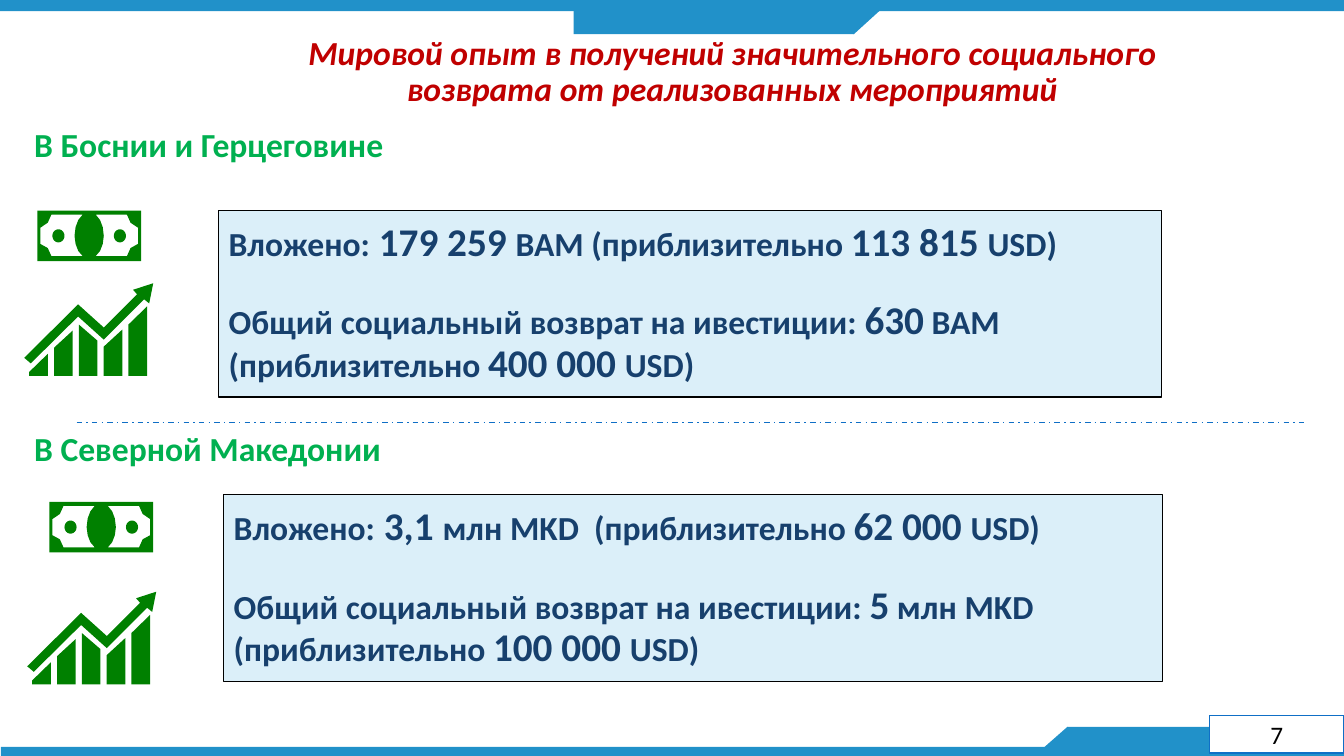
from dataclasses import dataclass
from math import cos, pi, sin

from lxml.etree import SubElement
from pptx import Presentation
from pptx.dml.color import RGBColor
from pptx.enum.dml import MSO_LINE
from pptx.enum.shapes import MSO_CONNECTOR, MSO_SHAPE as Shape
from pptx.enum.text import MSO_ANCHOR, MSO_AUTO_SIZE, PP_ALIGN
from pptx.oxml.ns import qn
from pptx.util import Emu, Inches, Pt


@dataclass(frozen=True)
class Theme:
    font: str = "Calibri"
    band: RGBColor = RGBColor(0x21, 0x91, 0xC9)
    panel: RGBColor = RGBColor(0xDB, 0xEF, 0xF9)
    rule: RGBColor = RGBColor(0x0F, 0x6F, 0xC6)
    navy: RGBColor = RGBColor(0x17, 0x40, 0x6D)
    red: RGBColor = RGBColor(0xC0, 0x00, 0x00)
    green: RGBColor = RGBColor(0x00, 0xB0, 0x50)
    icon: RGBColor = RGBColor(0x00, 0x80, 0x00)
    black: RGBColor = RGBColor(0x00, 0x00, 0x00)
    white: RGBColor = RGBColor(0xFF, 0xFF, 0xFF)
    number_size: Pt = Pt(18)
    text_size: Pt = Pt(24)
    figure_size: Pt = Pt(28)


theme = Theme()


def cells(*counts):
    """Turn counts of grid cells, a tenth of an inch each, into lengths."""
    return [Emu(round(count * Inches(0.1))) for count in counts]


def style(paragraph, color, size=theme.text_size, bold=True):
    paragraph.font.name = theme.font
    paragraph.font.size = size
    paragraph.font.bold = bold
    paragraph.font.color.rgb = color


COLUMNS, ROWS = 133.33, 75
presentation = Presentation()
presentation.slide_width, presentation.slide_height = cells(COLUMNS, ROWS)
slide = presentation.slides.add_slide(presentation.slide_layouts[5])
shapes = slide.shapes

# Bands along the top and bottom edges
for kind, left, top, width, height, rotation in (
    (Shape.RECTANGLE, 0, 0, COLUMNS, 1.1, 0),
    (Shape.RECTANGLE, 0.1, 74.1, COLUMNS - 0.1, 0.9, 0),
    (Shape.RECTANGLE, 56.9, 0.4, 27.8, 3, 0),
    (Shape.FLOWCHART_MERGE, 81.4, 0.4, 6.6, 3, 0),
    (Shape.RECTANGLE, 105.9, 72.1, COLUMNS - 105.9, 2.9, 0),
    (Shape.FLOWCHART_MERGE, 102.6, 72.1, 6.6, 2.9, 180),
):
    band = shapes.add_shape(kind, *cells(left, top, width, height))
    band.rotation = rotation
    band.shadow.inherit = False
    band.fill.solid()
    band.fill.fore_color.rgb = theme.band
    band.line.fill.background()

# Heading
title = shapes.title
title.left, title.top, title.width, title.height = cells(28.1, 2.9, 89.1, 8.6)
title.text_frame.text = (
    "Мировой опыт в получений значительного социального возврата от реализованных мероприятий"
)
title.text_frame.auto_size = MSO_AUTO_SIZE.NONE
title.text_frame.vertical_anchor = MSO_ANCHOR.MIDDLE
heading = title.text_frame.paragraphs[0]
heading.alignment = PP_ALIGN.CENTER
heading.line_spacing = 0.9
style(heading, theme.red)
heading.font.italic = True

# Icon outlines; a contour inside another cuts a hole
NOTE_WIDTH, NOTE_HEIGHT = 10.3, 5
note_window = [
    (1.4, 0.4), (4.5, 0.4), (4.07, 0.93), (3.8, 1.64), (3.7, 2.5), (3.8, 3.3), (4.07, 4),
    (4.5, 4.5), (1.4, 4.5), (1.04, 3.71), (0.3, 3.3), (0.3, 1.7), (1.04, 1.2),
]
note_dot = [
    (2.1 + 0.6 * cos(step * pi / 12), 2.5 + 0.65 * sin(step * pi / 12)) for step in range(24)
]
banknote = [[(0, 0), (0, NOTE_HEIGHT), (NOTE_WIDTH, NOTE_HEIGHT), (NOTE_WIDTH, 0)]]
for contour in (note_window, note_dot):
    banknote += [contour, [(NOTE_WIDTH - x, y) for x, y in contour]]

BAR_WIDTH, BAR_BOTTOM = 1.85, 9.2
growth = [[
    (12.8, 0), (10.8, 0.65), (11.2, 1.1), (7.9, 4.4), (5.35, 2.1), (0, 7.4),
    (0.65, 7.95), (5.35, 3.3), (7.9, 5.6), (11.9, 1.6), (12.4, 2),
]]
for index, (left_top, right_top) in enumerate(
    ((8.8, 7), (6.4, 4.7), (4.1, 5.7), (6.3, 4.6), (4.1, 2.3))
):
    left = 0.5 + 2.46 * index
    right = left + BAR_WIDTH
    growth.append([(left, left_top), (right, right_top), (right, BAR_BOTTOM), (left, BAR_BOTTOM)])

# One block per country; figures alternate with plain wording in each line
countries = (
    ("В Боснии и Герцеговине", 11.8, (21.7, 20.9, 93.5, 18.5), Pt(1), (3.7, 20.9), (2.4, 28.1), (
        ("Вложено:", " 179 259 ", "ВАМ (приблизительно ", "113 815 ", "USD)"),
        ("Общий социальный возврат на ивестиции: ", "630", " ВАМ (приблизительно ",
         "400 000 ", "USD)"),
    )),
    ("В Северной Македонии", 42, (22.2, 49.1, 93.1, 18.5), Pt(0.75), (4.9, 49.8), (2.7, 58.7), (
        ("Вложено:", " 3,1 ", "млн MKD  (приблизительно ", "62 000 ", "USD)"),
        ("Общий социальный возврат на ивестиции: ", "5", " млн MKD (приблизительно ",
         "100 000 ", "USD)"),
    )),
)
for country, label_top, panel_box, border, note_place, growth_place, lines in countries:
    label = shapes.add_textbox(*cells(2.4, label_top, 49.2, 5))
    label.text_frame.word_wrap = True
    label.text_frame.text = country
    style(label.text_frame.paragraphs[0], theme.green)

    panel = shapes.add_shape(Shape.RECTANGLE, *cells(*panel_box))
    panel.shadow.inherit = False
    panel.fill.solid()
    panel.fill.fore_color.rgb = theme.panel
    panel.line.color.rgb = theme.black
    panel.line.width = border
    frame = panel.text_frame
    frame.word_wrap = True
    frame.vertical_anchor = MSO_ANCHOR.MIDDLE
    for line_index, pieces in enumerate(lines):
        paragraph = frame.add_paragraph() if line_index else frame.paragraphs[0]
        paragraph.alignment = PP_ALIGN.LEFT
        paragraph.line_spacing = 0.9
        if line_index:
            paragraph.space_before = Pt(26)
        style(paragraph, theme.navy)
        for piece_index, piece in enumerate(pieces):
            run = paragraph.add_run()
            run.text = piece
            if piece_index % 2:
                run.font.size = theme.figure_size

    for contours, place in ((banknote, note_place), (growth, growth_place)):
        outlines = [[cells(*point) for point in contour] for contour in contours]
        builder = shapes.build_freeform(*outlines[0][0])
        builder.add_line_segments(outlines[0][1:])
        for outline in outlines[1:]:
            builder.move_to(*outline[0])
            builder.add_line_segments(outline[1:])
        icon = builder.convert_to_shape(*cells(*place))
        icon.shadow.inherit = False
        icon.fill.solid()
        icon.fill.fore_color.rgb = theme.icon
        icon.line.fill.background()

# Divider between the countries
divider = shapes.add_connector(MSO_CONNECTOR.STRAIGHT, *cells(7.6, 41.9, 129.8, 41.9))
divider.line.color.rgb = theme.rule
divider.line.width = Pt(1)
divider.line.dash_style = MSO_LINE.DASH_DOT
SubElement(divider.element.spPr, qn("a:effectLst"))

# Page number
page = shapes.add_shape(Shape.RECTANGLE, *cells(120, 71, COLUMNS - 120, 3.7))
page.shadow.inherit = False
page.fill.solid()
page.fill.fore_color.rgb = theme.white
page.line.color.rgb = theme.rule
page.line.width = Pt(1)
page.text_frame.text = "7"
page.text_frame.vertical_anchor = MSO_ANCHOR.MIDDLE
page.text_frame.paragraphs[0].alignment = PP_ALIGN.CENTER
style(page.text_frame.paragraphs[0], theme.black, theme.number_size, bold=False)

presentation.save("out.pptx")
